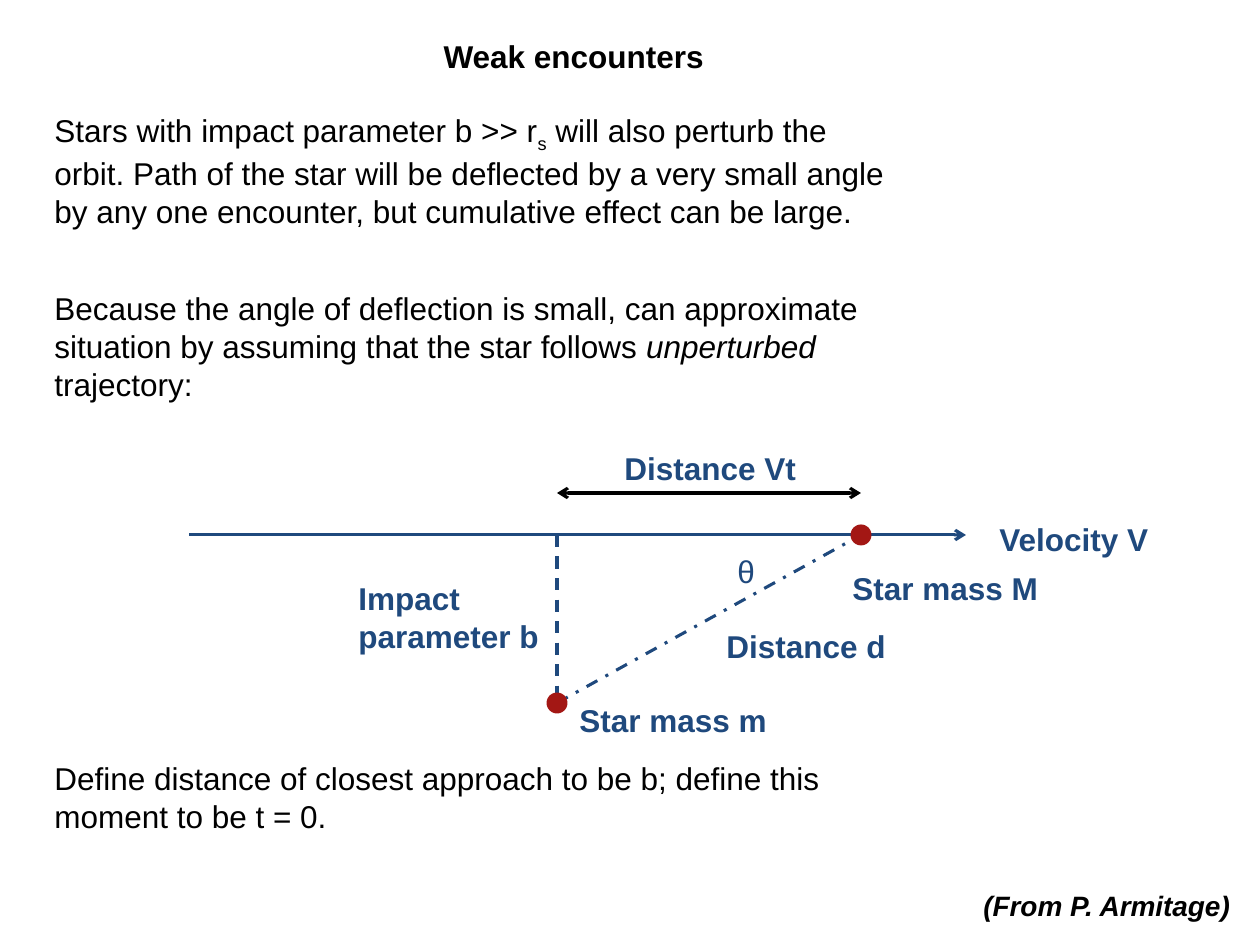
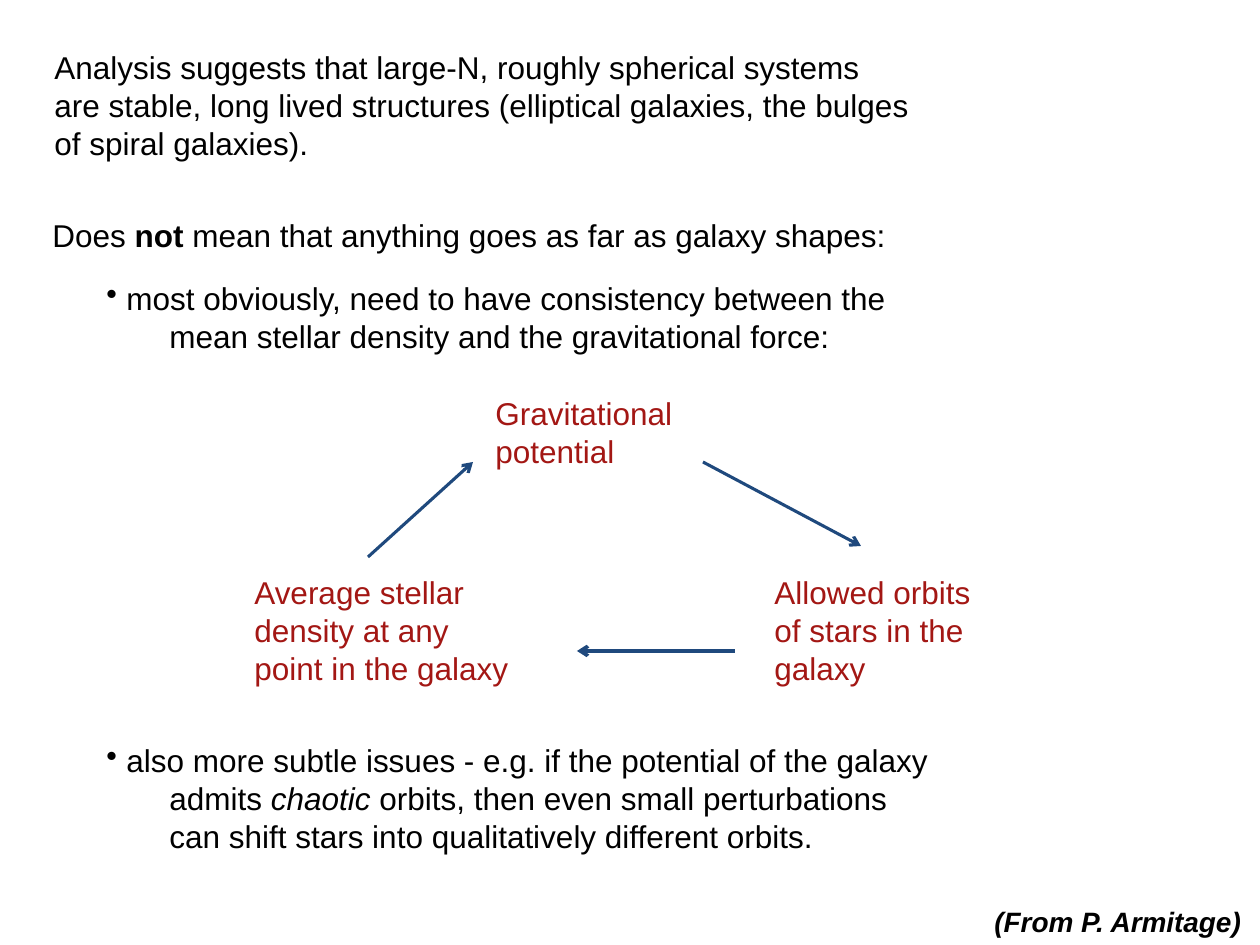
"""Build two slides on weak stellar encounters and galaxy structure."""
from lxml import etree
from pptx import Presentation
from pptx import util as u
from pptx.dml.color import RGBColor
from pptx.enum import dml, shapes, text
from pptx.oxml import ns

SCALE = 914400 / 126
BLACK = RGBColor(0x00, 0x00, 0x00)
NAVY = RGBColor(0x1F, 0x49, 0x7D)
RED = RGBColor(0xA3, 0x17, 0x14)
DASH = dml.MSO_LINE.DASH
DOT = dml.MSO_LINE.DASH_DOT


def px(*vals):
    """Turn px into EMU."""
    return [u.Emu(round(v * SCALE)) for v in vals]


class Deck:
    """Hold the shared style and the current slide."""

    font, size, step = "Arial", 18, 63

    def __init__(self):
        """Start an empty deck."""
        self.prs = Presentation()
        self.prs.slide_width, self.prs.slide_height = px(1260, 945)

    def page(self, titled=False):
        """Add a slide and make it current."""
        layout = self.prs.slide_layouts[5 if titled else 6]
        self.slide = self.prs.slides.add_slide(layout)

    def title(self, words, box):
        """Place and format the title."""
        shape = self.slide.shapes.title
        shape.left, shape.top, shape.width, shape.height = px(*box)
        self.fill(shape.text_frame, [[(words, "b")]], BLACK, self.size)

    def text(self, box, lines, color=BLACK, style="", size=None):
        """Add a text box; a line is a string or a list of runs."""
        rows = [[(row, style)] if isinstance(row, str) else row for row in lines]
        frame = self.slide.shapes.add_textbox(*px(*box)).text_frame
        self.fill(frame, rows, color, size or self.size)
        return frame

    def fill(self, frame, rows, color, size):
        """Write rows of runs into a frame."""
        frame.word_wrap = False
        frame.auto_size = text.MSO_AUTO_SIZE.SHAPE_TO_FIT_TEXT
        frame.vertical_anchor = text.MSO_ANCHOR.TOP
        for num, row in enumerate(rows):
            para = frame.add_paragraph() if num else frame.paragraphs[0]
            para.alignment = text.PP_ALIGN.LEFT
            for words, style in row:
                run = para.add_run()
                run.text = words
                font = run.font
                font.name, font.size = self.font, u.Pt(size)
                font.color.rgb = color
                font.bold, font.italic = "b" in style, "i" in style
                if "s" in style:
                    run._r.get_or_add_rPr().set("baseline", "-25000")

    def bullet(self, box, lines):
        """Add a bullet whose further lines are indented."""
        frame = self.text(box, lines)
        for num, para in enumerate(frame.paragraphs):
            prop = para._p.get_or_add_pPr()
            left, = px(self.step if num else 20)
            prop.set("marL", str(left))
            prop.set("indent", str(0 if num else -left))
            if not num:
                etree.SubElement(prop, ns.qn("a:buChar")).set("char", "•")

    def line(self, ends, color=NAVY, width=1.75, dash=None, tips=()):
        """Add a straight line with arrowheads at the named tips."""
        kind = shapes.MSO_CONNECTOR.STRAIGHT
        conn = self.slide.shapes.add_connector(kind, *px(*ends))
        conn.line.color.rgb, conn.line.width = color, u.Pt(width)
        if dash:
            conn.line.dash_style = dash
        stroke = conn.line._get_or_add_ln()
        for tip in tips:
            etree.SubElement(stroke, ns.qn("a:" + tip)).set("type", "arrow")
        etree.SubElement(conn._element.spPr, ns.qn("a:effectLst"))

    def star(self, x, y, size=21):
        """Add a dot centred on a point."""
        box = px(x - size / 2, y - size / 2, size, size)
        dot = self.slide.shapes.add_shape(shapes.MSO_SHAPE.OVAL, *box)
        dot.shadow.inherit = False
        dot.fill.solid()
        dot.fill.fore_color.rgb = RED
        dot.line.fill.background()

    def credit(self, x, y):
        """Add the source credit."""
        self.text((x, y, 277, 47), ["(From P. Armitage)"], style="bi", size=16)


def meet(deck):
    """Draw the weak encounter slide."""
    deck.page(titled=True)
    deck.title("Weak encounters", (431, 31, 373, 63))
    deck.text((42, 105, 1133, 164), [
        [("Stars with impact parameter b >> r", ""), ("s", "s"),
         (" will also perturb the", "")],
        "orbit. Path of the star will be deflected by a very small angle",
        "by any one encounter, but cumulative effect can be large."])
    deck.text((42, 283, 1097, 164), [
        "Because the angle of deflection is small, can approximate",
        [("situation by assuming that the star follows ", ""),
         ("unperturbed", "i")],
        "trajectory:"])
    near, far, top, low = 557, 861, 535, 703
    deck.line((189, top, 966, top), tips=["tailEnd"])
    deck.line((near, top, near, low), dash=DASH)
    deck.line((near, low, far, top), dash=DOT)
    deck.line((near, 493, far, 493), BLACK, tips=["headEnd", "tailEnd"])
    deck.star(near, low)
    deck.star(far, top)
    for x, y, wide, *lines in (
            (987, 514, 200, "Velocity V"),
            (840, 563, 235, "Star mass M"),
            (567, 695, 235, "Star mass m"),
            (346, 573, 230, "Impact", "parameter b"),
            (612, 443, 220, "Distance Vt"),
            (714, 621, 210, "Distance d")):
        deck.text((x, y, wide, 12 + 38 * len(lines)), lines, NAVY, "b")
    deck.text((725, 546, 42, 50), ["θ"], NAVY)
    deck.text((42, 753, 1057, 113), [
        "Define distance of closest approach to be b; define this",
        "moment to be t = 0."])
    deck.credit(971, 882)


def shape(deck):
    """Draw the galaxy shape slide."""
    deck.page()
    deck.text((42, 42, 1166, 164), [
        "Analysis suggests that large-N, roughly spherical systems",
        "are stable, long lived structures (elliptical galaxies, the bulges",
        "of spiral galaxies)."])
    deck.text((40, 210, 1137, 63), [
        [("Does ", ""), ("not", "b"),
         (" mean that anything goes as far as galaxy shapes:", "")]])
    deck.bullet((94, 273, 1067, 113), [
        "most obviously, need to have consistency between the",
        "mean stellar density and the gravitational force:"])
    for box, lines in (
            ((483, 388, 261, 113), ["Gravitational", "potential"]),
            ((762, 567, 299, 164),
             ["Allowed orbits", "of stars in the", "galaxy"]),
            ((242, 567, 364, 164),
             ["Average stellar", "density at any", "point in the galaxy"])):
        deck.text(box, lines, RED)
    for ends, width in (((703, 462, 861, 546), 1.75),
                        ((735, 651, 577, 651), 2),
                        ((368, 557, 473, 462), 1.75)):
        deck.line(ends, width=width, tips=["tailEnd"])
    deck.bullet((94, 735, 1133, 164), [
        "also more subtle issues - e.g. if the potential of the galaxy",
        [("admits ", ""), ("chaotic", "i"),
         (" orbits, then even small perturbations", "")],
        "can shift stars into qualitatively different orbits."])
    deck.credit(982, 898)


def main():
    """Build and save the deck."""
    deck = Deck()
    meet(deck)
    shape(deck)
    deck.prs.save("out.pptx")


if __name__ == "__main__":
    main()
